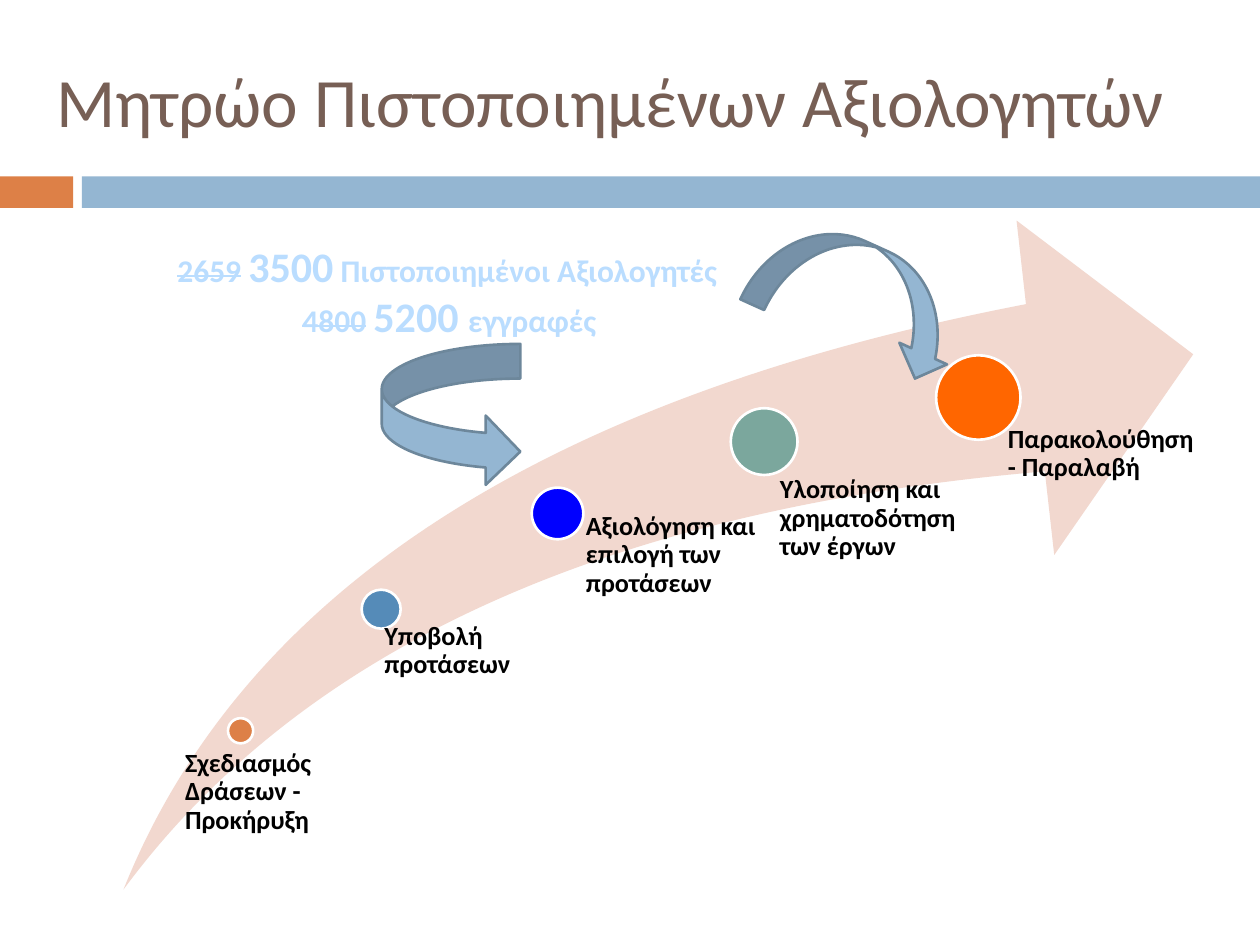
import pptx
import pptx.util
import pptx.dml.color
import pptx.enum.shapes
import pptx.enum.text

Inches = pptx.util.Inches
Shapes = pptx.enum.shapes.MSO_SHAPE
Align = pptx.enum.text.PP_ALIGN
Anchor = pptx.enum.text.MSO_ANCHOR

COLORS = {
    "title": "775F55", "orange": "DD8047", "blue": "94B6D2", "swoosh": "F2D8CF",
    "white": "FFFFFF", "edge": "6D879B", "black": "000000", "count": "BADDFF",
    "submission": "558BB8", "evaluation": "0000FF", "funding": "7BA79D",
    "monitoring": "FF6600",
}


def rgb(name):
    return pptx.dml.color.RGBColor.from_string(COLORS[name])


class SlideBuilder:
    font_name = "Calibri"
    line_width = 1.5

    def __init__(self, slide):
        self.slide = slide

    def add_shape(self, kind, box, fill, line=None, rotation=0, adjustments=()):
        shape = self.slide.shapes.add_shape(kind, *map(Inches, box))
        shape.shadow.inherit = False
        shape.rotation = rotation
        for index, value in enumerate(adjustments):
            shape.adjustments[index] = value
        shape.fill.solid()
        shape.fill.fore_color.rgb = rgb(fill)
        if line:
            shape.line.color.rgb = rgb(line)
            shape.line.width = pptx.util.Pt(self.line_width)
        else:
            shape.line.fill.background()

    def add_text(self, box, paragraphs, color, frame_format=None, paragraph_format=None):
        shape = self.slide.shapes.add_textbox(*map(Inches, box))
        frame = shape.text_frame
        for name, value in {"word_wrap": True, **(frame_format or {})}.items():
            setattr(frame, name, value)
        for index, (alignment, runs) in enumerate(paragraphs):
            paragraph = frame.add_paragraph() if index else frame.paragraphs[0]
            formats = {"alignment": alignment, **(paragraph_format or {})}
            for name, value in formats.items():
                setattr(paragraph, name, value)
            for text, size, bold, strike in runs:
                self.add_run(paragraph, text, size, bold, strike, color)

    def add_run(self, paragraph, text, size, bold, strike, color):
        run = paragraph.add_run()
        run.text = text
        formats = {"name": self.font_name, "size": pptx.util.Pt(size), "bold": bold}
        for name, value in formats.items():
            setattr(run.font, name, value)
        run.font.color.rgb = rgb(color)
        if strike:
            run._r.get_or_add_rPr().set("strike", "sngStrike")

    def add_stage(self, circle, color, label_box, indent, label):
        left, top, diameter = circle
        self.add_shape(Shapes.OVAL, (left, top, diameter, diameter), color, "white")
        insets = {"margin_left": Inches(indent), "margin_top": 0,
                  "margin_right": 0, "margin_bottom": 0}
        self.add_text(label_box, [(Align.LEFT, [(label, 15, True, False)])], "black",
                      insets, {"line_spacing": 0.9})


STAGES = [
    ((1.81, 5.7, 0.2), "orange", (1.37, 5.95, 1.59, 0.71), 0.1,
     "Σχεδιασμός Δράσεων - Προκήρυξη"),
    ((2.87, 4.68, 0.31), "submission", (2.89, 4.94, 1.8, 1.26), 0.16,
     "Υποβολή προτάσεων"),
    ((4.22, 3.87, 0.41), "evaluation", (4.43, 4.07, 1.64, 2.98), 0.22,
     "Αξιολόγηση και επιλογή των προτάσεων"),
    ((5.8, 3.24, 0.53), "funding", (5.91, 3.78, 2.02, 0.92), 0.28,
     "Υλοποίηση και χρηματοδότηση των έργων"),
    ((7.43, 2.82, 0.67), "monitoring", (7.64, 3.38, 1.93, 0.98), 0.36,
     "Παρακολούθηση - Παραλαβή"),
]

COUNTS = [
    (Align.LEFT, [("2659", 18, True, True), (" ", 18, True, False),
                  ("3500", 24, True, False),
                  (" Πιστοποιημένοι Αξιολογητές", 18, True, False)]),
    (Align.CENTER, [("4800", 18, True, True), (" ", 18, True, False),
                    ("5200 ", 24, True, False), ("εγγραφές ", 18, True, False)]),
]


def main():
    presentation = pptx.Presentation()
    presentation.slide_width = Inches(10)
    presentation.slide_height = Inches(7.5)
    builder = SlideBuilder(presentation.slides.add_slide(presentation.slide_layouts[6]))

    builder.add_shape(Shapes.RECTANGLE, (0, 1.4, 0.58, 0.25), "orange")
    builder.add_shape(Shapes.RECTANGLE, (0.65, 1.4, 9.35, 0.25), "blue")
    title = [("Μητρώο Πιστοποιημένων Αξιολογητών", 39.6, False, False)]
    builder.add_text((0.35, 0.25, 9.37, 1.08), [(Align.LEFT, title)], "title",
                     {"vertical_anchor": Anchor.MIDDLE})
    builder.add_shape(Shapes.SWOOSH_ARROW, (0.98, 1.75, 8.49, 5.31), "swoosh",
                      adjustments=(0.25, 0.25))
    for stage in STAGES:
        builder.add_stage(*stage)
    builder.add_text((1.31, 1.86, 4.57, 1.02), COUNTS, "count")
    builder.add_shape(Shapes.CURVED_RIGHT_ARROW, (3.03, 2.73, 1.1, 1.13), "blue", "edge")
    builder.add_shape(Shapes.CURVED_DOWN_ARROW, (5.97, 1.94, 1.73, 0.83), "blue", "edge",
                      rotation=24.4)

    presentation.save("out.pptx")


if __name__ == "__main__":
    main()
